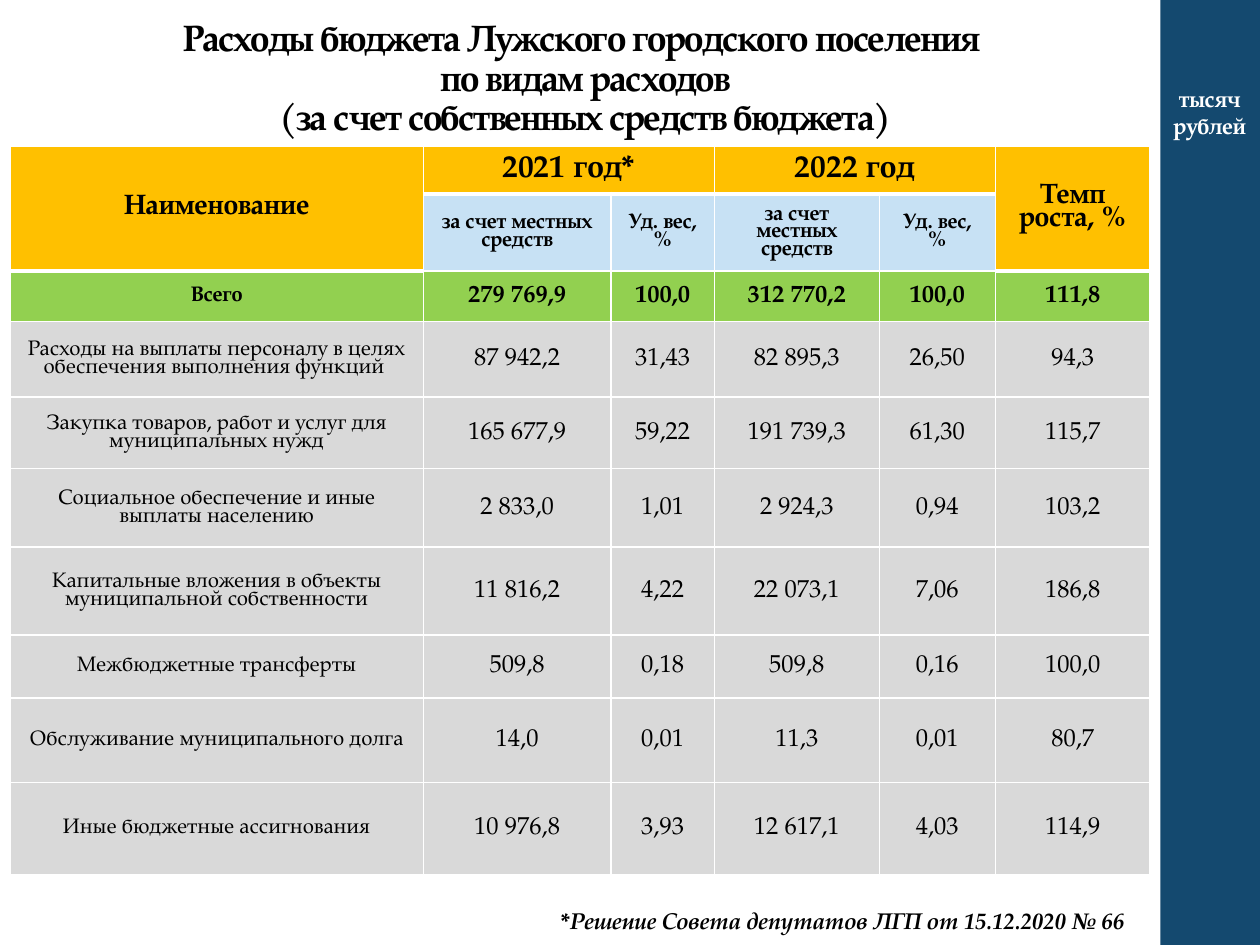
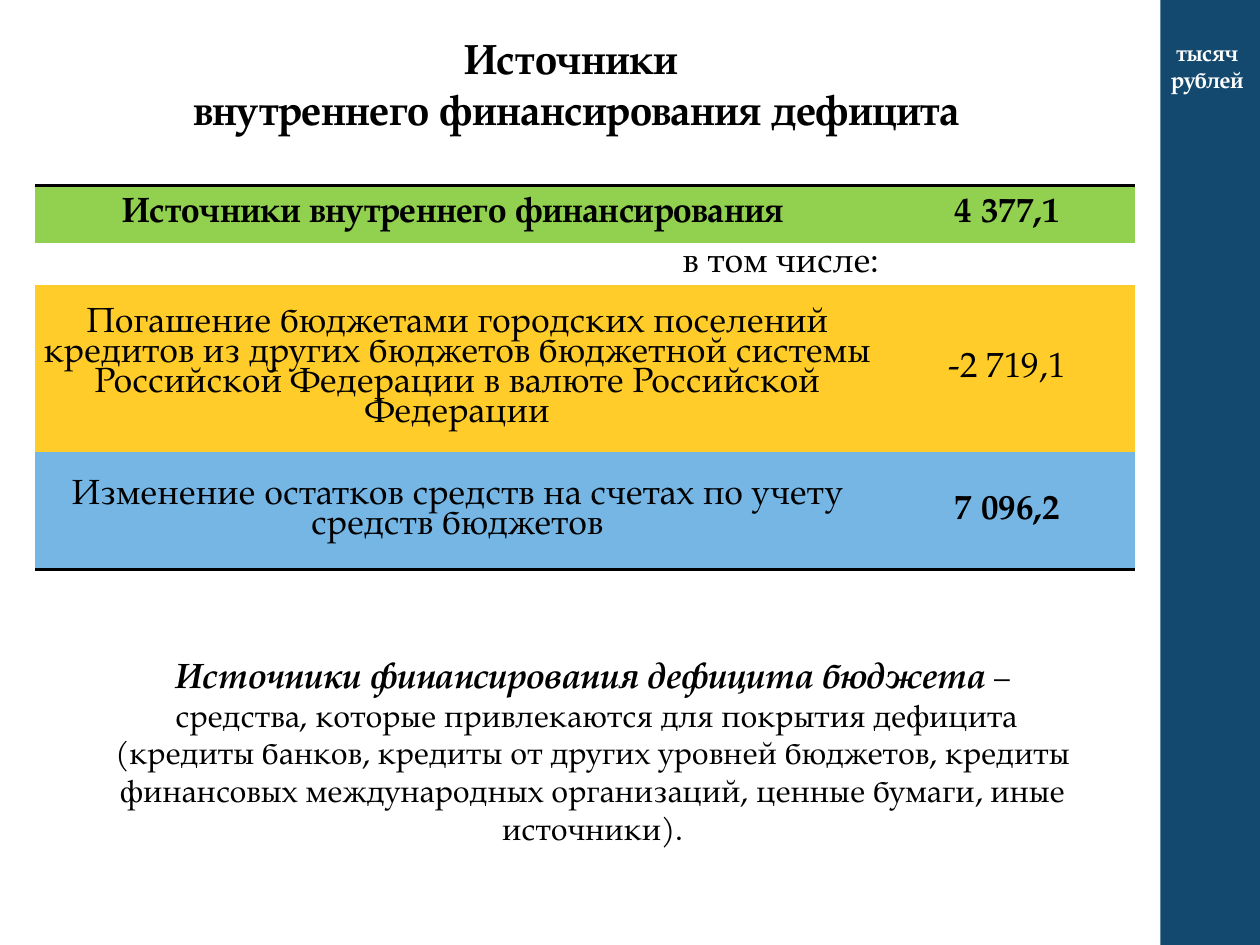
from lxml.etree import SubElement
from pptx import Presentation
from pptx.dml.color import RGBColor
from pptx.enum.shapes import MSO_SHAPE as Shape
from pptx.enum.text import MSO_ANCHOR as Anchor, PP_ALIGN as Align
from pptx.oxml.ns import qn
from pptx.util import Inches, Pt

FONT = "TeX Gyre Pagella"
BLACK, WHITE, NAVY = "000000", "FFFFFF", "14496F"
GOLD, GREEN, GREY, PALE = "FFC000", "92D050", "D9D9D9", "C7E1F4"
AMBER, SKY = "FFCC29", "75B6E5"

EXPENSES = [
    ("Расходы на выплаты персоналу в целях обеспечения выполнения функций ",
     "87 942,2", "31,43", "82 895,3", "26,50", "94,3"),
    ("Закупка товаров, работ и услуг для муниципальных нужд",
     "165 677,9", "59,22", "191 739,3", "61,30", "115,7"),
    ("Социальное обеспечение и иные выплаты населению",
     "2 833,0", "1,01", "2 924,3", "0,94", "103,2"),
    ("Капитальные вложения в объекты муниципальной собственности",
     "11 816,2", "4,22", "22 073,1", "7,06", "186,8"),
    ("Межбюджетные трансферты", "509,8", "0,18", "509,8", "0,16", "100,0"),
    ("Обслуживание муниципального долга", "14,0", "0,01", "11,3", "0,01", "80,7"),
    ("Иные бюджетные ассигнования", "10 976,8", "3,93", "12 617,1", "4,03", "114,9"),
]
TOTAL = ("Всего", "279 769,9", "100,0", "312 770,2", "100,0", "111,8")
YEARS = ("Наименование", "2021 год*", "", "2022 год", "", "Темп роста, %")
MEASURES = ("", "за счет местных средств", "Уд. вес,\n%",
            "за счет местных средств", "Уд. вес, %", "")

FINANCING = [
    ("Источники внутреннего финансирования ", "4 377,1", GREEN),
    ("в том числе:", "", WHITE),
    ("Погашение бюджетами городских поселений кредитов из других бюджетов "
     "бюджетной системы Российской Федерации в валюте Российской Федерации",
     "-2 719,1", AMBER),
    ("Изменение остатков средств на счетах по учету средств бюджетов",
     "7 096,2", SKY),
]


def color(value):
    return RGBColor.from_string(value)


class Deck:
    """Holds the shared style and the slide being built."""

    def __init__(self):
        self.presentation = Presentation()
        self.presentation.slide_width = Inches(10)
        self.presentation.slide_height = Inches(7.5)
        self.slide = None

    def new_slide(self):
        layout = self.presentation.slide_layouts[6]
        self.slide = self.presentation.slides.add_slide(layout)
        band = self.shape(Shape.RECTANGLE, 9.21, 0, 0.8, 7.5)
        band.fill.solid()
        band.fill.fore_color.rgb = color(NAVY)

    def shape(self, kind, left, top, width, height):
        shape = self.slide.shapes.add_shape(
            kind, Inches(left), Inches(top), Inches(width), Inches(height))
        shape.shadow.inherit = False
        shape.fill.background()
        shape.line.fill.background()
        return shape

    def style_run(self, run, size, bold=False, italic=False, ink=BLACK):
        run.font.name = FONT
        run.font.size = Pt(size)
        run.font.bold = bold
        run.font.italic = italic
        run.font.color.rgb = color(ink)

    def fill_text(self, text_frame, text, size, align=Align.CENTER, spacing=1.0, **style):
        text_frame.text = text
        for paragraph in text_frame.paragraphs:
            paragraph.alignment = align
            paragraph.line_spacing = spacing
            for run in paragraph.runs:
                self.style_run(run, size, **style)

    def text(self, left, top, width, height, text, size, **style):
        box = self.slide.shapes.add_textbox(
            Inches(left), Inches(top), Inches(width), Inches(height))
        box.text_frame.word_wrap = True
        self.fill_text(box.text_frame, text, size, **style)
        return box.text_frame

    def units(self, left, top):
        self.text(left, top, 0.98, 0.54, "тысяч рублей", 13, bold=True, ink=WHITE)

    def table(self, left, top, columns, rows):
        table = self.slide.shapes.add_table(
            len(rows), len(columns), Inches(left), Inches(top),
            Inches(sum(columns)), Inches(sum(rows))).table
        for column, width in zip(table.columns, columns):
            column.width = Inches(width)
        for row, height in zip(table.rows, rows):
            row.height = Inches(height)
        return table

    def cell(self, cell, text, size, fill, borders, **style):
        cell.vertical_anchor = Anchor.MIDDLE
        self.fill_text(cell.text_frame, text, size, spacing=0.85, **style)
        for side in "LRTB":
            self.border(cell, side, *borders.get(side, (None, 0)))
        cell.fill.solid()
        cell.fill.fore_color.rgb = color(fill)

    def border(self, cell, side, ink, width):
        properties = cell._tc.get_or_add_tcPr()
        line = SubElement(properties, qn(f"a:ln{side}"), w=str(Pt(width)))
        if ink:
            solid = SubElement(line, qn("a:solidFill"))
            SubElement(solid, qn("a:srgbClr"), val=ink)
        else:
            SubElement(line, qn("a:noFill"))


def build_expenses(deck):
    deck.new_slide()
    title = deck.text(
        0.2, -0.02, 8.83, 1.17,
        "Расходы бюджета Лужского городского поселения\v по видам расходов\v"
        " (за счет собственных средств бюджета)", 21, spacing=0.9, bold=True)
    title.vertical_anchor = Anchor.BOTTOM
    for run in title.paragraphs[0].runs:
        run._r.get_or_add_rPr().set("spc", "-70")

    table = deck.table(0.08, 1.15, [3.28, 1.49, 0.82, 1.31, 0.92, 1.23],
                       [0.39, 0.6, 0.4, 0.6, 0.57, 0.62, 0.7, 0.5, 0.67, 0.73])
    fills = [GOLD, PALE, GREEN] + [GREY] * len(EXPENSES)
    widths = [3, 1] + [1] * (len(EXPENSES) + 1)
    for row, values in enumerate([YEARS, MEASURES, TOTAL] + EXPENSES):
        for column, value in enumerate(values):
            outer = column in (0, 5)
            if row == 0:
                size = 16 if outer else 18
            else:
                size = 12 if row == 1 or column == 0 else 14
            bottom = 3 if row == 1 and outer else widths[row]
            top = 3 if row == 2 and outer else widths[max(row - 1, 0)]
            borders = {"L": (WHITE, 1), "R": (WHITE, 1),
                       "T": (WHITE, top), "B": (WHITE, bottom)}
            fill = GOLD if row == 1 and outer else fills[row]
            deck.cell(table.cell(row, column), value, size, fill, borders, bold=row < 3)
    for start, end in (((0, 0), (1, 0)), ((0, 1), (0, 2)),
                       ((0, 3), (0, 4)), ((0, 5), (1, 5))):
        table.cell(*start).merge(table.cell(*end))

    deck.text(4.35, 7.15, 4.88, 0.32, "*Решение Совета депутатов ЛГП от 15.12.2020 № 66",
              13, align=Align.LEFT, bold=True, italic=True)
    deck.units(9.11, 0.62)


def build_financing(deck):
    deck.new_slide()
    deck.text(0.04, 0.21, 9.07, 0.91,
              "Источники \nвнутреннего финансирования дефицита", 24, bold=True)

    table = deck.table(0.28, 1.47, [6.7, 2.03], [0.46, 0.33, 1.33, 0.93])
    last = len(FINANCING) - 1
    for row, (source, amount, fill) in enumerate(FINANCING):
        borders = {0: {"T": (BLACK, 2)}, last: {"B": (BLACK, 2)}}.get(row, {})
        for column, value in enumerate((source, amount)):
            cell = table.cell(row, column)
            cell.margin_left = cell.margin_right = 0
            cell.margin_top = cell.margin_bottom = 0
            deck.cell(cell, value, 20, fill, borders,
                      align=Align.RIGHT if row == 1 else Align.CENTER,
                      bold=row == 0 or (row == last and column == 1))

    definition = deck.shape(Shape.ROUNDED_RECTANGLE, 0.69, 5.09, 8.03, 1.66)
    definition.adjustments[0] = 0.1
    text_frame = definition.text_frame
    text_frame.word_wrap = True
    text_frame.vertical_anchor = Anchor.TOP
    deck.fill_text(
        text_frame,
        "Источники финансирования дефицита бюджета\n"
        " средства, которые привлекаются для покрытия дефицита (кредиты банков, "
        "кредиты от других уровней бюджетов, кредиты финансовых международных "
        "организаций, ценные бумаги, иные источники).", 18)
    term = text_frame.paragraphs[0]
    deck.style_run(term.runs[0], 20, bold=True, italic=True)
    dash = term.add_run()
    dash.text = " –"
    deck.style_run(dash, 18)
    deck.units(9.09, 0.26)


def main():
    deck = Deck()
    build_expenses(deck)
    build_financing(deck)
    deck.presentation.save("out.pptx")


if __name__ == "__main__":
    main()
